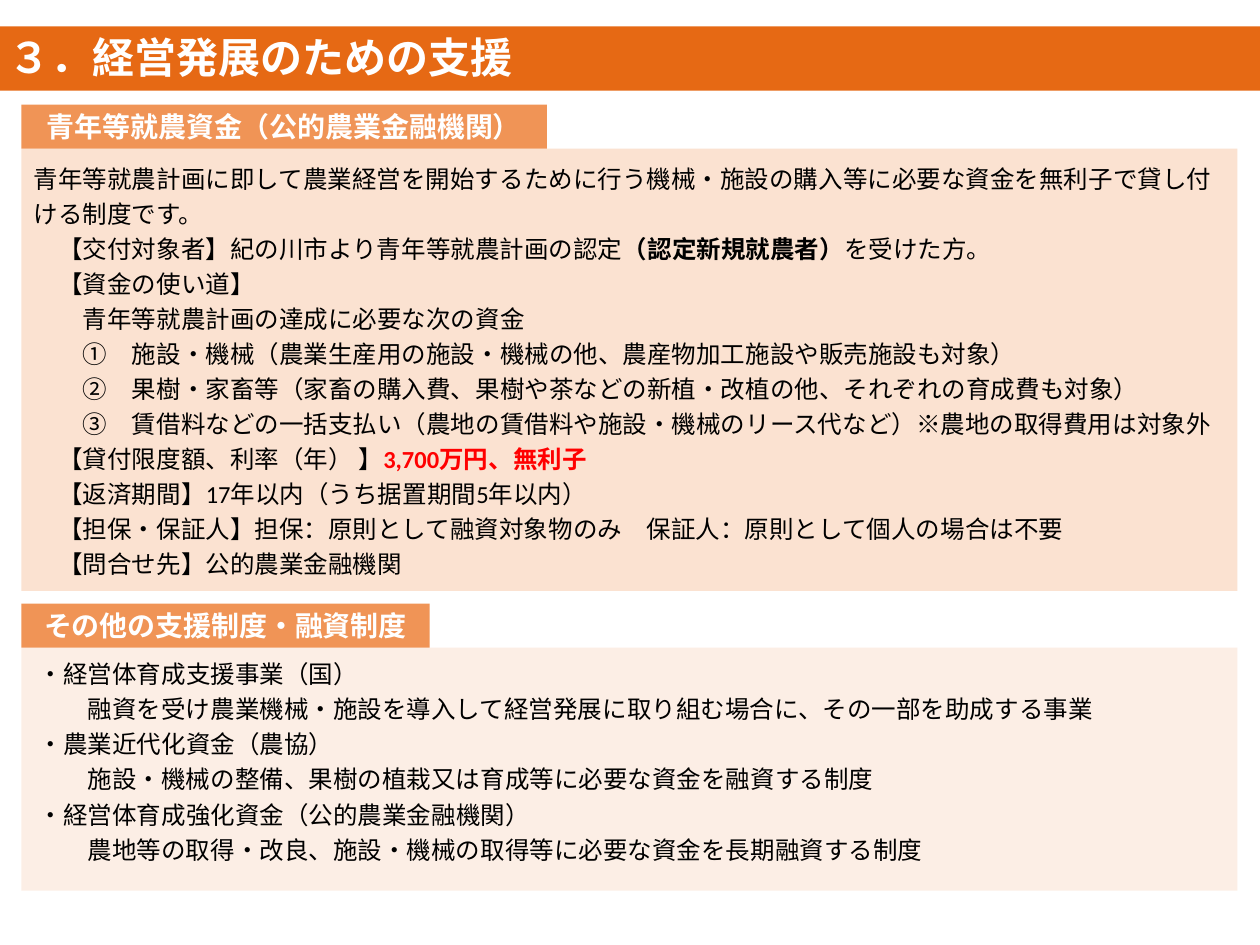
from dataclasses import dataclass

from lxml import etree
from pptx import Presentation
from pptx import util as u
from pptx.dml.color import RGBColor
from pptx.enum import shapes, text
from pptx.oxml.ns import qn


@dataclass(frozen=True)
class Theme:
    """Colours, type sizes and font of the slide."""

    banner: str = "E66914"
    tab: str = "F09456"
    panel: str = "FBE2D1"
    white: str = "FFFFFF"
    ink: str = "000000"
    alert: str = "FF0000"
    font: str = "Calibri"
    title: int = 24
    heading: int = 16
    body: int = 14
    leading: int = 20


THEME = Theme()
LEFT, PANEL_WIDTH, TAB_HEIGHT = 0.17, 9.65, 0.35

LOAN_LINES = [
    (0, ["青年等就農計画に即して農業経営を開始するために行う機械・施設の購入等に必要な資金を無利子で貸し付ける制度です。"]),
    (1, ["【交付対象者】紀の川市より青年等就農計画の認定", ("（認定新規就農者）", THEME.ink), "を受けた方。"]),
    (1, ["【資金の使い道】"]),
    (2, ["青年等就農計画の達成に必要な次の資金"]),
    (2, ["①　施設・機械（農業生産用の施設・機械の他、農産物加工施設や販売施設も対象）"]),
    (2, ["②　果樹・家畜等（家畜の購入費、果樹や茶などの新植・改植の他、それぞれの育成費も対象）"]),
    (2, ["③　賃借料などの一括支払い（農地の賃借料や施設・機械のリース代など）※農地の取得費用は対象外"]),
    (1, ["【貸付限度額、利率（年） 】", ("3,700万円、無利子", THEME.alert)]),
    (1, ["【返済期間】17年以内（うち据置期間5年以内）"]),
    (1, ["【担保・保証人】担保：原則として融資対象物のみ　保証人：原則として個人の場合は不要"]),
    (1, ["【問合せ先】公的農業金融機関"]),
]
OTHER_LINES = [
    (0, ["・経営体育成支援事業（国）"]),
    (2, ["融資を受け農業機械・施設を導入して経営発展に取り組む場合に、その一部を助成する事業"]),
    (0, ["・農業近代化資金（農協）"]),
    (2, ["施設・機械の整備、果樹の植栽又は育成等に必要な資金を融資する制度"]),
    (0, ["・経営体育成強化資金（公的農業金融機関）"]),
    (2, ["農地等の取得・改良、施設・機械の取得等に必要な資金を長期融資する制度"]),
]


def add_run(paragraph, wording, size, color, bold=False):
    """Append one styled run to a paragraph."""
    run = paragraph.add_run()
    run.text = wording
    run.font.name = THEME.font
    run.font.size = u.Pt(size)
    run.font.bold = bold
    run.font.color.rgb = RGBColor.from_string(color)


def add_block(slide, box, color, opacity=100):
    """Draw a flat rectangle in the box, optionally translucent."""
    shape = slide.shapes.add_shape(shapes.MSO_SHAPE.RECTANGLE, *map(u.Inches, box))
    shape.shadow.inherit = False
    shape.line.fill.background()
    shape.fill.solid()
    shape.fill.fore_color.rgb = RGBColor.from_string(color)
    if opacity < 100:
        fill_color = shape._element.spPr.find(qn("a:solidFill"))[0]
        etree.SubElement(fill_color, qn("a:alpha"), val=str(opacity * 1000))
    return shape


def add_text_frame(slide, box):
    """Place a wrapping text box and return its frame."""
    frame = slide.shapes.add_textbox(*map(u.Inches, box)).text_frame
    frame.word_wrap = True
    return frame


def add_banner(slide, box):
    """Draw the title banner across the box."""
    add_block(slide, box, THEME.banner)
    left, top, _, height = box
    frame = add_text_frame(slide, (left, top, 4.69, height + 0.02))
    frame.vertical_anchor = text.MSO_ANCHOR.MIDDLE
    frame.margin_left = frame.margin_right = u.Inches(0.07)
    frame.margin_top = frame.margin_bottom = u.Inches(0.04)
    paragraph = frame.paragraphs[0]
    paragraph.line_spacing = 0.9
    add_run(paragraph, "３．経営発展のための支援", THEME.title, THEME.white, True)


def add_lines(slide, box, lines):
    """Set indented body lines, where a coloured pair is an emphasised run."""
    frame = add_text_frame(slide, box)
    for index, (level, parts) in enumerate(lines):
        paragraph = frame.add_paragraph() if index else frame.paragraphs[0]
        paragraph.line_spacing = u.Pt(THEME.leading)
        indent = u.Pt(level * THEME.body)
        paragraph._p.get_or_add_pPr().set("marL", str(indent))
        for part in parts:
            bold = isinstance(part, tuple)
            wording, color = part if bold else (part, THEME.ink)
            add_run(paragraph, wording, THEME.body, color, bold)


def add_section(slide, box, heading, tab_width, lines, text_offset, opacity=100):
    """Draw a tabbed panel with its heading and body lines in the box."""
    left, top, width, height = box
    panel_top, panel_height = top + TAB_HEIGHT, height - TAB_HEIGHT
    add_block(slide, (left, panel_top, width, panel_height), THEME.panel, opacity)
    tab = add_block(slide, (left, top, tab_width, TAB_HEIGHT), THEME.tab)
    tab.text_frame.vertical_anchor = text.MSO_ANCHOR.MIDDLE
    paragraph = tab.text_frame.paragraphs[0]
    paragraph.alignment = text.PP_ALIGN.CENTER
    add_run(paragraph, heading, THEME.heading, THEME.white, True)
    shift, drop = text_offset
    text_box = (left + shift, panel_top + drop, 9.58 - shift, panel_height - drop)
    add_lines(slide, text_box, lines)


def main():
    """Build and save the slide."""
    presentation = Presentation()
    presentation.slide_width, presentation.slide_height = u.Inches(10), u.Inches(7.5)
    slide = presentation.slides.add_slide(presentation.slide_layouts[6])
    add_banner(slide, (0, 0.21, 10, 0.51))
    add_section(slide, (LEFT, 0.83, PANEL_WIDTH, 3.86),
                "青年等就農資金（公的農業金融機関）", 4.17, LOAN_LINES, (0, 0.03))
    add_section(slide, (LEFT, 4.79, PANEL_WIDTH, 2.28),
                "その他の支援制度・融資制度", 3.24, OTHER_LINES, (0.04, 0), 56)
    presentation.save("out.pptx")


if __name__ == "__main__":
    main()
